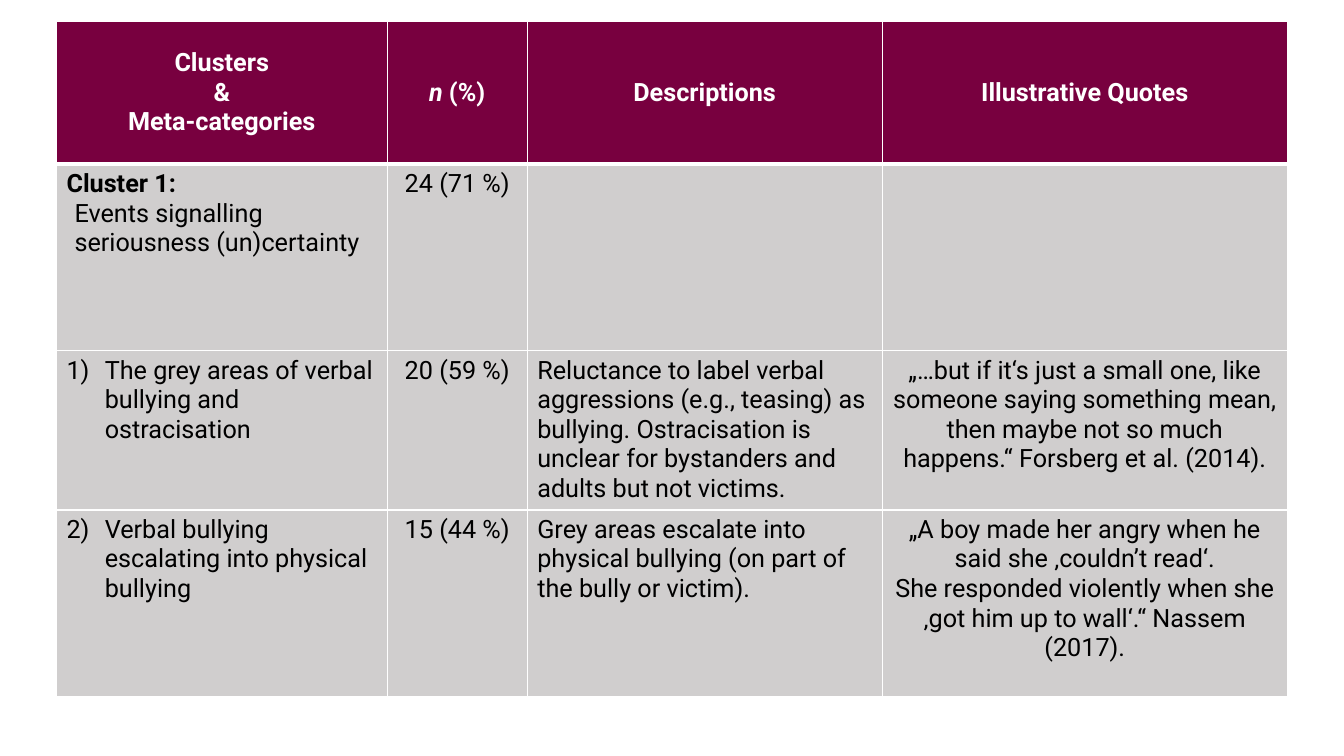
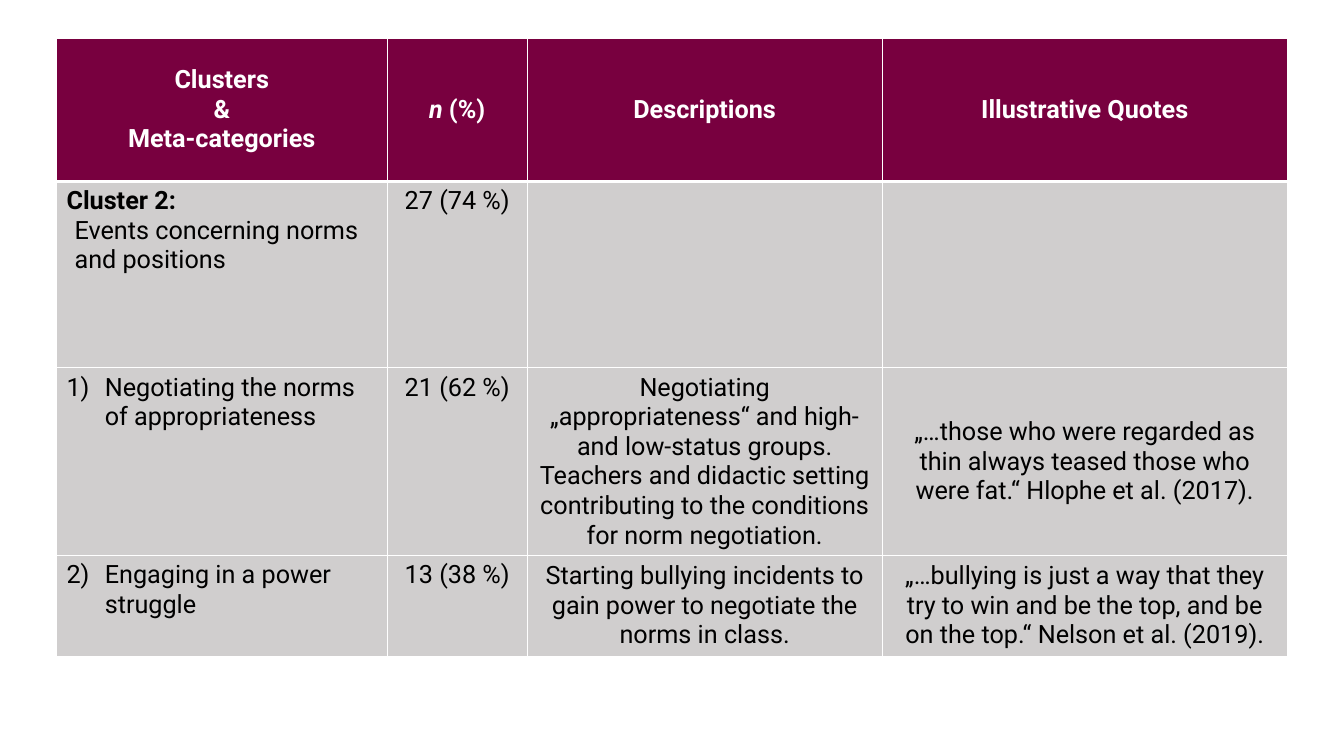
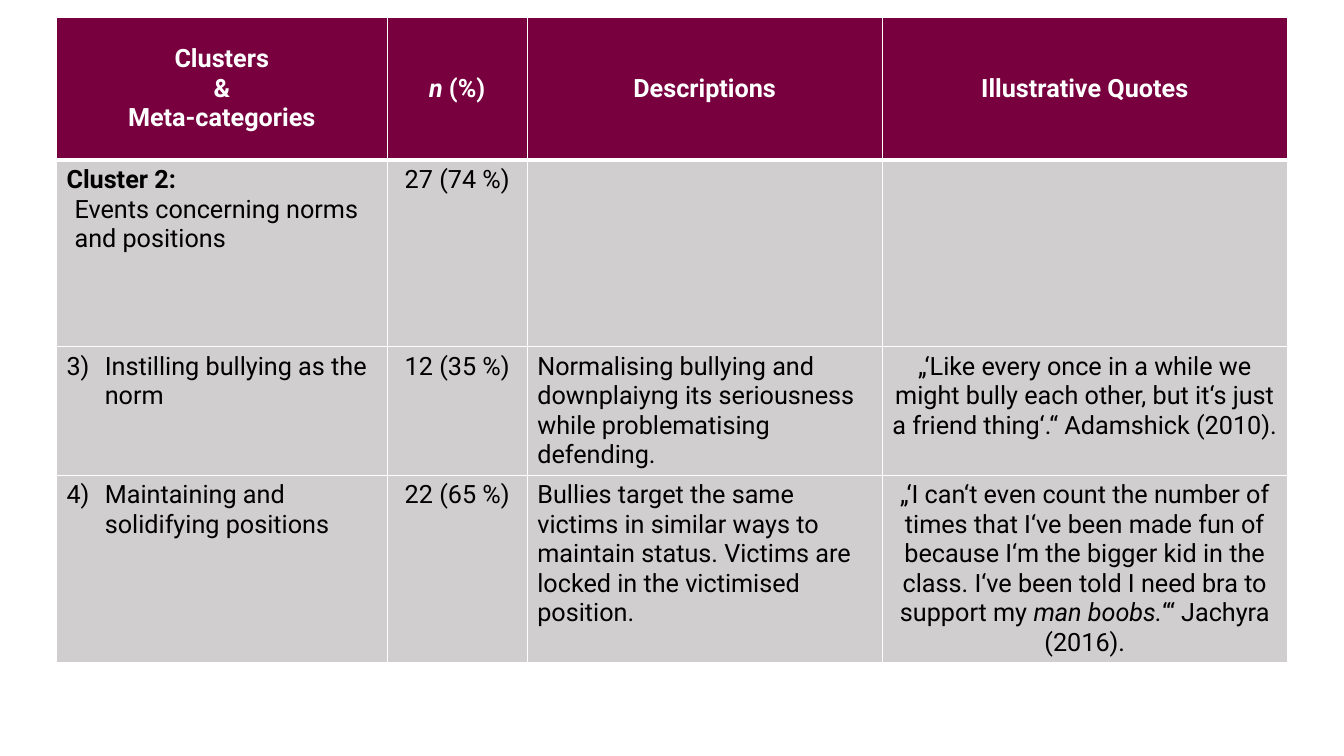
from lxml.etree import SubElement
from pptx import Presentation
from pptx.dml.color import RGBColor
from pptx.enum.text import MSO_ANCHOR, PP_ALIGN
from pptx.oxml.ns import qn
from pptx.util import Inches, Pt

# Shared look
WINE = RGBColor(0x78, 0x00, 0x3F)
GREY = RGBColor(0xD0, 0xCE, 0xCE)
WHITE = RGBColor(0xFF, 0xFF, 0xFF)
BLACK = RGBColor(0x00, 0x00, 0x00)
FONT = "Roboto"
TEXT_SIZE = Pt(18)
THIN, THICK = Pt(1), Pt(3)
TABLE_LEFT = 0.56
COLUMN_WIDTHS = [3.28, 1.39, 3.52, 4.02]
HEADER_HEIGHT, CLUSTER_HEIGHT = 1.42, 1.85
CLUSTER_INDENT, NUMBER_INDENT = 0.08, 0.38
LEFT, CENTER = PP_ALIGN.LEFT, PP_ALIGN.CENTER
TOP, MIDDLE = MSO_ANCHOR.TOP, MSO_ANCHOR.MIDDLE

# Content: a cell is a list of paragraphs, a paragraph is a list of (text, style) runs
HEADERS = [
    [[("Clusters", "")], [("&\nMeta-categories", "")]],
    [[("n ", "italic"), ("(%)", "")]],
    [[("Descriptions", "")]],
    [[("Illustrative Quotes", "")]],
]
NORMS = ("Cluster 2:", "Events concerning norms and positions", "27 (74 %)")

# Each category: row height, name, count, description, quote paragraphs
SLIDES = [
    {
        "top": 0.21,
        "cluster": ("Cluster 1:", "Events signalling seriousness (un)certainty", "24 (71 %)"),
        "first_number": 1,
        "description_align": LEFT,
        "detail_anchor": TOP,
        "categories": [
            (1.58, "The grey areas of verbal bullying and ostracisation", "20 (59 %)",
             "Reluctance to label verbal aggressions (e.g., teasing) as bullying. "
             "Ostracisation is unclear for bystanders and adults but not victims.",
             [[("„…but if it‘s just a small one, like someone saying something mean, "
                "then maybe not so much happens.“ Forsberg et al. (2014).", "")]]),
            (1.85, "Verbal bullying escalating into physical bullying", "15 (44 %)",
             "Grey areas escalate into physical bullying (on part of the bully or victim).",
             [[("„A boy made her angry when he said she ‚couldn’t read‘.", "")],
              [("She responded violently when she ‚got him up to wall‘.“ Nassem (2017).", "")]]),
        ],
    },
    {
        "top": 0.38,
        "cluster": NORMS,
        "first_number": 1,
        "description_align": CENTER,
        "detail_anchor": MIDDLE,
        "categories": [
            (1.86, "Negotiating the norms of appropriateness", "21 (62 %)",
             "Negotiating „appropriateness“ and high- and low-status groups. Teachers and "
             "didactic setting contributing to the conditions for norm negotiation.",
             [[("„…those who were regarded as thin always teased those who were fat.“ "
                "Hlophe et al. (2017).", "")]]),
            (1, "Engaging in a power struggle", "13 (38 %)",
             "Starting bullying incidents to gain power to negotiate the norms in class.",
             [[("„…bullying is just a way that they try to win and be the top, and be on "
                "the top.“ Nelson et al. (2019).", "")]]),
        ],
    },
    {
        "top": 0.17,
        "cluster": NORMS,
        "first_number": 3,
        "description_align": LEFT,
        "detail_anchor": TOP,
        "categories": [
            (1.27, "Instilling bullying as the norm", "12 (35 %)",
             "Normalising bullying and downplaiyng its seriousness while problematising defending.",
             [[("„‘Like every once in a while we might bully each other, but it‘s just a "
                "friend thing‘.“ Adamshick (2010).", "")]]),
            (1.86, "Maintaining and solidifying positions", "22 (65 %)",
             "Bullies target the same victims in similar ways to maintain status. "
             "Victims are locked in the victimised position.",
             [[("„‘I can‘t even count the number of times that I‘ve been made fun of because "
                "I‘m the bigger kid in the class. I‘ve been told I need bra to support my ", ""),
               ("man boobs.", "italic"), ("‘“ Jachyra (2016).", "")]]),
        ],
    },
]


def style_cell(cell, color, top=THIN, bottom=THIN):
    """Give a cell white borders and a solid fill."""
    properties = cell._tc.get_or_add_tcPr()
    for side, width in (("L", THIN), ("R", THIN), ("T", top), ("B", bottom)):
        line = SubElement(properties, qn(f"a:ln{side}"), w=str(width))
        fill = SubElement(line, qn("a:solidFill"))
        SubElement(fill, qn("a:srgbClr"), val=str(WHITE))
    cell.fill.solid()
    cell.fill.fore_color.rgb = color


def write_cell(cell, paragraphs, align=LEFT, anchor=TOP, color=BLACK, bold=False):
    """Write paragraphs of (text, style) runs into a cell."""
    cell.vertical_anchor = anchor
    frame = cell.text_frame
    for index, runs in enumerate(paragraphs):
        paragraph = frame.add_paragraph() if index else frame.paragraphs[0]
        paragraph.alignment = align
        for text, style in runs:
            for part_index, part in enumerate(text.split("\n")):
                if part_index:
                    paragraph.add_line_break()
                run = paragraph.add_run()
                run.text = part
                run.font.name = FONT
                run.font.size = TEXT_SIZE
                run.font.color.rgb = color
                run.font.bold = bold or style == "bold"
                run.font.italic = style == "italic"


def indent(paragraph, left, first_line=0):
    properties = paragraph._p.get_or_add_pPr()
    properties.set("marL", str(Inches(left)))
    properties.set("indent", str(Inches(first_line)))
    return properties


def number(paragraph, start):
    properties = indent(paragraph, NUMBER_INDENT, -NUMBER_INDENT)
    SubElement(properties, qn("a:buFont"), typeface="+mj-lt")
    SubElement(properties, qn("a:buAutoNum"), type="arabicParenR", startAt=str(start))


def add_cluster_table(slide, content):
    heights = [HEADER_HEIGHT, CLUSTER_HEIGHT] + [item[0] for item in content["categories"]]
    table = slide.shapes.add_table(
        len(heights), len(COLUMN_WIDTHS), Inches(TABLE_LEFT), Inches(content["top"]),
        Inches(sum(COLUMN_WIDTHS)), Inches(sum(heights))).table
    table.horz_banding = False
    for column, width in zip(table.columns, COLUMN_WIDTHS):
        column.width = Inches(width)
    for row, height in zip(table.rows, heights):
        row.height = Inches(height)

    # Header row
    for cell, paragraphs in zip(table.rows[0].cells, HEADERS):
        style_cell(cell, WINE, bottom=THICK)
        write_cell(cell, paragraphs, CENTER, MIDDLE, WHITE, bold=True)

    # Grey body, with a thick line below the header
    for row_index in range(1, len(heights)):
        for cell in table.rows[row_index].cells:
            style_cell(cell, GREY, top=THICK if row_index == 1 else THIN)

    # Cluster row
    title, subject, count = content["cluster"]
    cluster_cell = table.cell(1, 0)
    write_cell(cluster_cell, [[(title, "bold")], [(subject, "")]])
    indent(cluster_cell.text_frame.paragraphs[1], CLUSTER_INDENT)
    write_cell(table.cell(1, 1), [[(count, "")]], CENTER)

    # Numbered category rows
    anchor = content["detail_anchor"]
    for offset, (_, name, count, description, quote) in enumerate(content["categories"]):
        name_cell, count_cell, description_cell, quote_cell = table.rows[offset + 2].cells
        number(name_cell.text_frame.paragraphs[0], content["first_number"] + offset)
        write_cell(name_cell, [[(name, "")]])
        write_cell(count_cell, [[(count, "")]], CENTER)
        write_cell(description_cell, [[(description, "")]], content["description_align"], anchor)
        write_cell(quote_cell, quote, CENTER, anchor)


def main():
    presentation = Presentation()
    presentation.slide_width = Inches(13.33)
    presentation.slide_height = Inches(7.5)
    for content in SLIDES:
        slide = presentation.slides.add_slide(presentation.slide_layouts[6])
        add_cluster_table(slide, content)
    presentation.save("out.pptx")


if __name__ == "__main__":
    main()
